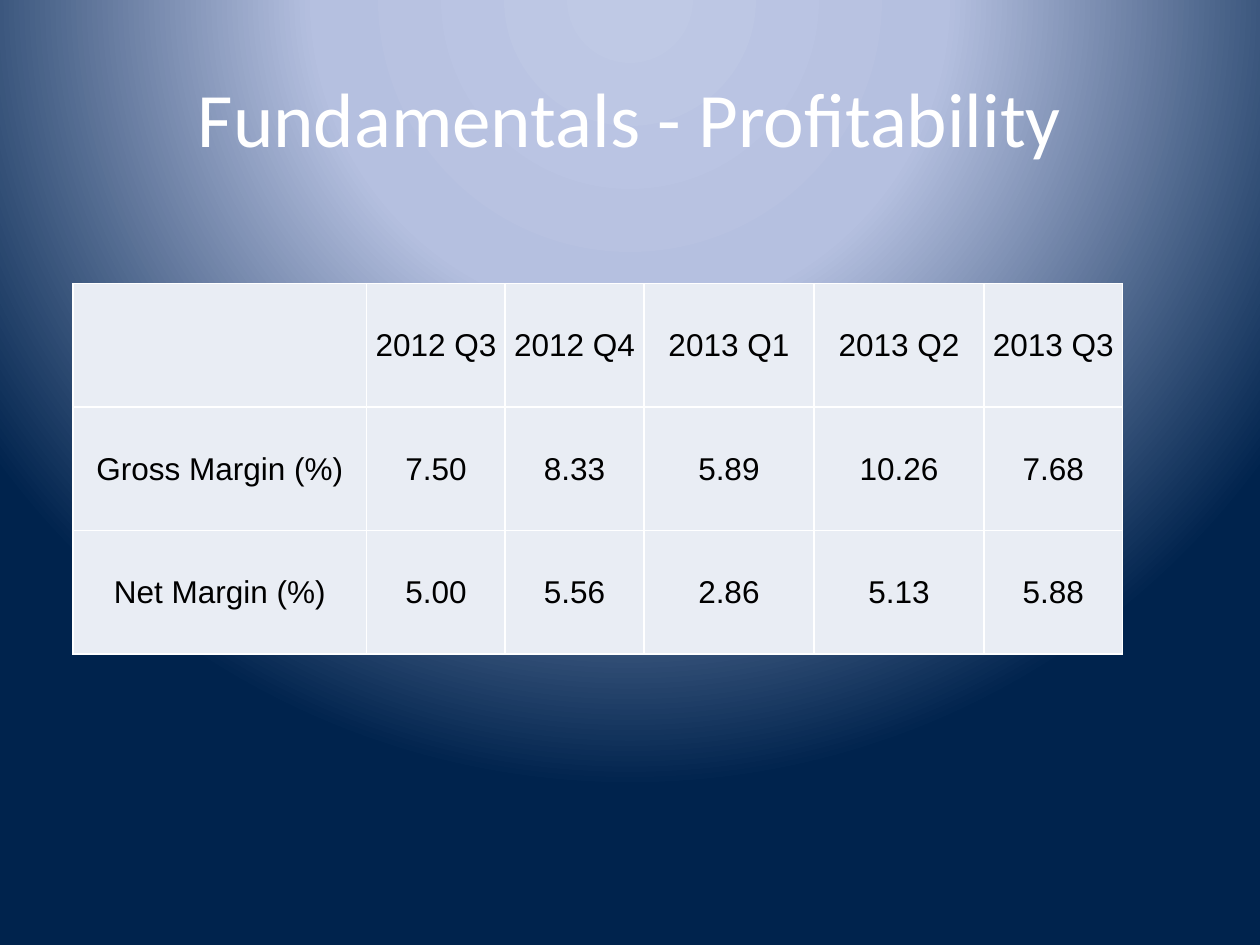
from lxml import etree
from pptx import Presentation
from pptx.dml.color import RGBColor
from pptx.enum.text import MSO_ANCHOR, PP_ALIGN
from pptx.oxml import parse_xml
from pptx.oxml.ns import nsdecls, qn
from pptx.util import Inches, Pt

CENTER = PP_ALIGN.CENTER
MIDDLE = MSO_ANCHOR.MIDDLE

WHITE = RGBColor(0xFF, 0xFF, 0xFF)
BLACK = RGBColor(0x00, 0x00, 0x00)
CELL_GREY = RGBColor(0xE9, 0xED, 0xF4)
GLOW_CENTER = RGBColor(0xBF, 0xC9, 0xE5)
GLOW_MIDDLE = RGBColor(0xB5, 0xC0, 0xE0)
NAVY = RGBColor(0x00, 0x23, 0x4D)

GLOW_STOPS = [(0, GLOW_CENTER), (40, GLOW_MIDDLE), (100, NAVY)]
COLUMN_WIDTHS = [2.33, 1.1, 1.1, 1.35, 1.35, 1.1]
ROW_HEIGHT = 0.98
MARGINS = [
    ["", "2012 Q3", "2012 Q4", "2013 Q1", "2013 Q2", "2013 Q3"],
    ["Gross Margin (%)", "7.50", "8.33", "5.89", "10.26", "7.68"],
    ["Net Margin (%)", "5.00", "5.56", "2.86", "5.13", "5.88"],
]


def paint_background(slide):
    stops = "".join(
        f'<a:gs pos="{share * 1000}"><a:srgbClr val="{color}"/></a:gs>'
        for share, color in GLOW_STOPS
    )
    background = parse_xml(
        f'<p:bg {nsdecls("p", "a")}><p:bgPr><a:gradFill rotWithShape="1">'
        f'<a:gsLst>{stops}</a:gsLst><a:path path="circle">'
        '<a:fillToRect l="50000" t="-80000" r="50000" b="180000"/></a:path>'
        '</a:gradFill><a:effectLst/></p:bgPr></p:bg>'
    )
    slide.element.cSld.insert(0, background)


def write_text(frame, text, font_name, size, color):
    paragraph = frame.paragraphs[0]
    paragraph.alignment = CENTER
    run = paragraph.add_run()
    run.text = text
    run.font.name = font_name
    run.font.size = Pt(size)
    run.font.color.rgb = color


def add_title(slide, text):
    title = slide.shapes.title
    title.left, title.top = Inches(0.5), Inches(0.3)
    title.width, title.height = Inches(9), Inches(1.25)
    title.text_frame.vertical_anchor = MIDDLE
    write_text(title.text_frame, text, "Calibri", 44, WHITE)


def outline_cell(cell):
    properties = cell._tc.get_or_add_tcPr()
    for position, side in enumerate(("a:lnL", "a:lnR", "a:lnT", "a:lnB")):
        border = etree.Element(qn(side), w=str(Pt(1)))
        fill = etree.SubElement(border, qn("a:solidFill"))
        etree.SubElement(fill, qn("a:srgbClr"), val=str(WHITE))
        properties.insert(position, border)


def format_cell(cell, text):
    cell.fill.solid()
    cell.fill.fore_color.rgb = CELL_GREY
    cell.vertical_anchor = MIDDLE
    cell.margin_left = cell.margin_right = cell.margin_top = Inches(0.01)
    cell.margin_bottom = 0
    outline_cell(cell)
    if text:
        write_text(cell.text_frame, text, "Arial", 18, BLACK)


def add_margin_table(slide, left, top):
    table = slide.shapes.add_table(
        len(MARGINS), len(COLUMN_WIDTHS), Inches(left), Inches(top),
        Inches(sum(COLUMN_WIDTHS)), Inches(ROW_HEIGHT * len(MARGINS)),
    ).table
    table.first_row = False
    table.horz_banding = False
    for column, width in zip(table.columns, COLUMN_WIDTHS):
        column.width = Inches(width)
    for row, texts in zip(table.rows, MARGINS):
        row.height = Inches(ROW_HEIGHT)
        for cell, text in zip(row.cells, texts):
            format_cell(cell, text)


def main():
    deck = Presentation()
    deck.slide_width, deck.slide_height = Inches(10), Inches(7.5)
    slide = deck.slides.add_slide(deck.slide_layouts.get_by_name("Title Only"))
    paint_background(slide)
    add_title(slide, "Fundamentals - Profitability")
    add_margin_table(slide, 0.58, 2.25)
    deck.save("out.pptx")


if __name__ == "__main__":
    main()
